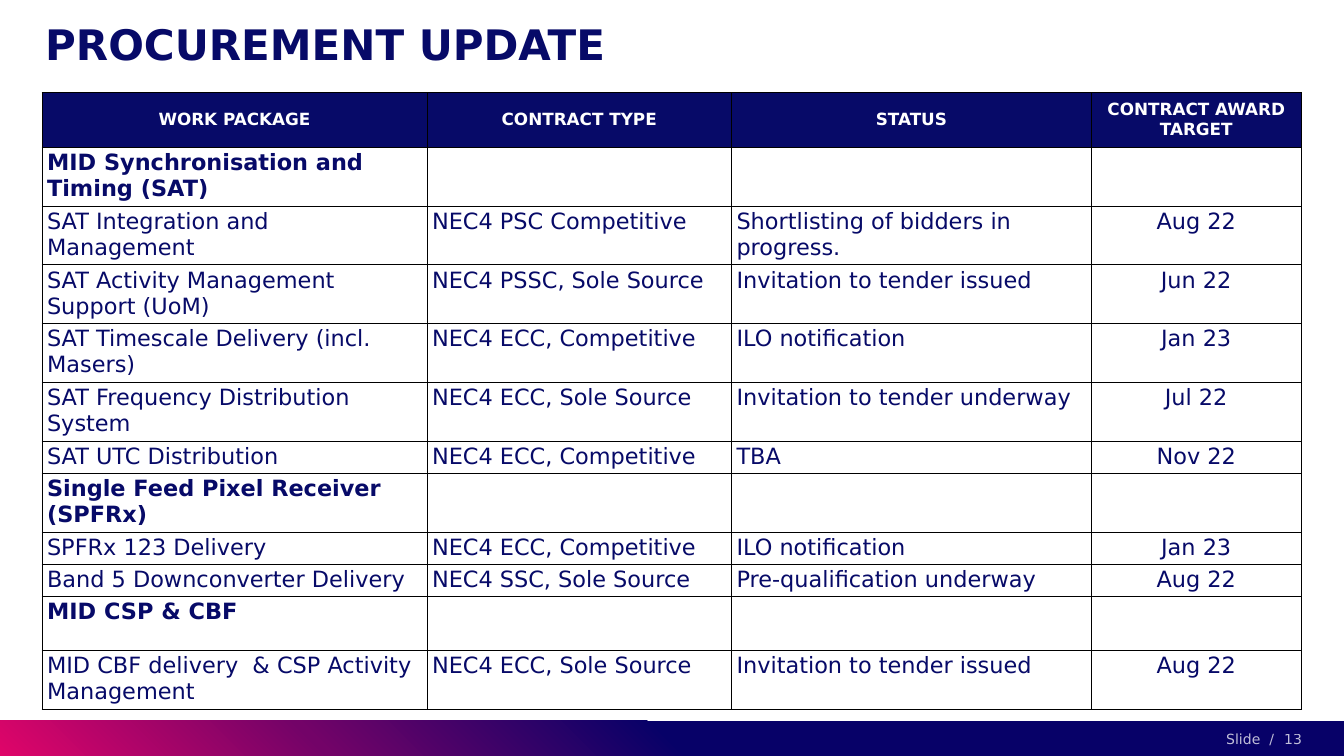
from dataclasses import dataclass

from lxml.etree import SubElement
from pptx import Presentation
from pptx.dml.color import RGBColor
from pptx.enum.shapes import MSO_SHAPE
from pptx.enum.text import MSO_ANCHOR, MSO_AUTO_SIZE, PP_ALIGN
from pptx.oxml import parse_xml
from pptx.oxml.ns import nsdecls, qn
from pptx.slide import Slide
from pptx.table import _Cell
from pptx.text.text import TextFrame
from pptx.util import Pt

NAVY = RGBColor(0x07, 0x0A, 0x68)
WHITE = RGBColor(0xFF, 0xFF, 0xFF)
BLACK = RGBColor(0x00, 0x00, 0x00)
BAR_STOPS = (
    (50, RGBColor(0x07, 0x01, 0x68)),
    (76, RGBColor(0x73, 0x03, 0x68)),
    (100, RGBColor(0xDF, 0x05, 0x69)),
)
FONT = "DejaVu Sans"
PAGE_WIDTH, PAGE_HEIGHT = 1920, 1080
BAR_TOP = 1030
COLUMN_WIDTHS = (550, 435, 514, 300)
HEADER_HEIGHT, SINGLE, DOUBLE, GROUP = 78, 46, 82, 77


@dataclass(frozen=True)
class WorkPackage:
    name: str
    contract: str = ""
    status: str = ""
    award: str = ""
    height: int = DOUBLE

    @property
    def is_group(self) -> bool:
        return not self.contract


@dataclass(frozen=True)
class FooterText:
    text: str
    left: float
    width: float
    align: PP_ALIGN


HEADINGS = ("WORK PACKAGE", "CONTRACT TYPE", "STATUS", "CONTRACT AWARD TARGET")
PACKAGES = (
    WorkPackage("MID Synchronisation and Timing (SAT)"),
    WorkPackage("SAT Integration and Management", "NEC4 PSC Competitive",
                "Shortlisting of bidders in progress.", "Aug 22"),
    WorkPackage("SAT Activity Management Support (UoM)", "NEC4 PSSC, Sole Source",
                "Invitation to tender issued", "Jun 22"),
    WorkPackage("SAT Timescale Delivery (incl. Masers)", "NEC4 ECC, Competitive",
                "ILO notification", "Jan 23"),
    WorkPackage("SAT Frequency Distribution System", "NEC4 ECC, Sole Source",
                "Invitation to tender underway", "Jul 22"),
    WorkPackage("SAT UTC Distribution", "NEC4 ECC, Competitive", "TBA", "Nov 22", SINGLE),
    WorkPackage("Single Feed Pixel Receiver (SPFRx)"),
    WorkPackage("SPFRx 123 Delivery", "NEC4 ECC, Competitive",
                "ILO notification", "Jan 23", SINGLE),
    WorkPackage("Band 5 Downconverter Delivery", "NEC4 SSC, Sole Source",
                "Pre-qualification underway", "Aug 22", SINGLE),
    WorkPackage("MID CSP & CBF", height=GROUP),
    WorkPackage("MID CBF delivery  & CSP Activity Management", "NEC4 ECC, Sole Source",
                "Invitation to tender issued", "Aug 22"),
)
FOOTERS = (
    FooterText("Slide  /", 1623.6, 201, PP_ALIGN.RIGHT),
    FooterText("13", 1830, 70, PP_ALIGN.LEFT),
)


def write_text(frame: TextFrame, text: str, *, size: float, color: RGBColor = NAVY,
               bold: bool = False, align: PP_ALIGN = PP_ALIGN.LEFT,
               opacity: int = 100) -> None:
    para = frame.paragraphs[0]
    para.alignment = align
    span = para.add_run()
    span.text = text
    font = span.font
    font.name = FONT
    font.size = Pt(size)
    font.bold = bold
    font.color.rgb = color
    if opacity < 100:
        color_element = span._r.find(".//" + qn("a:srgbClr"))
        SubElement(color_element, qn("a:alpha"), val=str(opacity * 1000))


def set_margins(frame: TextFrame, side: float, top: float, bottom: float) -> None:
    frame.margin_left = frame.margin_right = Pt(side)
    frame.margin_top = Pt(top)
    frame.margin_bottom = Pt(bottom)


def draw_title(page: Slide, text: str) -> None:
    title = page.shapes.title
    title.left, title.top, title.width, title.height = Pt(60), Pt(27), Pt(1800), Pt(150)
    frame = title.text_frame
    frame.word_wrap = True
    frame.auto_size = MSO_AUTO_SIZE.NONE
    frame.vertical_anchor = MSO_ANCHOR.TOP
    set_margins(frame, 4.5, 0, 4.5)
    write_text(frame, text, size=60, bold=True)


def draw_bar(page: Slide) -> None:
    bar = page.shapes.add_shape(MSO_SHAPE.RECTANGLE, Pt(0), Pt(BAR_TOP),
                                Pt(PAGE_WIDTH), Pt(PAGE_HEIGHT - BAR_TOP))
    bar.shadow.inherit = False
    bar.line.fill.background()
    stops = "".join(
        f'<a:gs pos="{position * 1000}"><a:srgbClr val="{color}"/></a:gs>'
        for position, color in BAR_STOPS
    )
    gradient = parse_xml(
        f'<a:gradFill {nsdecls("a")} rotWithShape="1"><a:gsLst>{stops}</a:gsLst>'
        '<a:lin ang="8100000" scaled="0"/></a:gradFill>'
    )
    bar._element.spPr.find(qn("a:prstGeom")).addnext(gradient)


def draw_footer(page: Slide, footer: FooterText) -> None:
    box = page.shapes.add_textbox(Pt(footer.left), Pt(1039.7), Pt(footer.width), Pt(32))
    frame = box.text_frame
    frame.word_wrap = True
    frame.vertical_anchor = MSO_ANCHOR.MIDDLE
    set_margins(frame, 4.5, 4.5, 4.5)
    write_text(frame, footer.text, size=20, color=WHITE, align=footer.align, opacity=75)


def style_cell(cell: _Cell, fill: RGBColor) -> None:
    properties = cell._tc.get_or_add_tcPr()
    for side in ("lnL", "lnR", "lnT", "lnB"):
        border = SubElement(properties, qn(f"a:{side}"), w=str(Pt(1)))
        paint = SubElement(border, qn("a:solidFill"))
        SubElement(paint, qn("a:srgbClr"), val=str(BLACK))
    cell.fill.solid()
    cell.fill.fore_color.rgb = fill


def draw_table(page: Slide) -> None:
    heights = (HEADER_HEIGHT, *(package.height for package in PACKAGES))
    frame = page.shapes.add_table(len(heights), len(COLUMN_WIDTHS), Pt(60), Pt(132),
                                  Pt(sum(COLUMN_WIDTHS)), Pt(sum(heights)))
    table = frame.table
    table.horz_banding = False
    for column, width in zip(table.columns, COLUMN_WIDTHS):
        column.width = Pt(width)
    for row, height in zip(table.rows, heights):
        row.height = Pt(height)
    for cell, heading in zip(table.rows[0].cells, HEADINGS):
        style_cell(cell, NAVY)
        cell.vertical_anchor = MSO_ANCHOR.MIDDLE
        write_text(cell.text_frame, heading, size=24, color=WHITE, bold=True,
                   align=PP_ALIGN.CENTER)
    aligns = (PP_ALIGN.LEFT, PP_ALIGN.LEFT, PP_ALIGN.LEFT, PP_ALIGN.CENTER)
    for row_index, package in enumerate(PACKAGES, start=1):
        values = (package.name, package.contract, package.status, package.award)
        for cell, value, align in zip(table.rows[row_index].cells, values, aligns):
            style_cell(cell, WHITE)
            if value:
                write_text(cell.text_frame, value, size=32, bold=package.is_group,
                           align=align)


def main() -> None:
    deck = Presentation()
    deck.slide_width, deck.slide_height = Pt(PAGE_WIDTH), Pt(PAGE_HEIGHT)
    page = deck.slides.add_slide(deck.slide_layouts[5])
    draw_bar(page)
    draw_title(page, "PROCUREMENT UPDATE")
    for footer in FOOTERS:
        draw_footer(page, footer)
    draw_table(page)
    deck.save("out.pptx")


if __name__ == "__main__":
    main()
